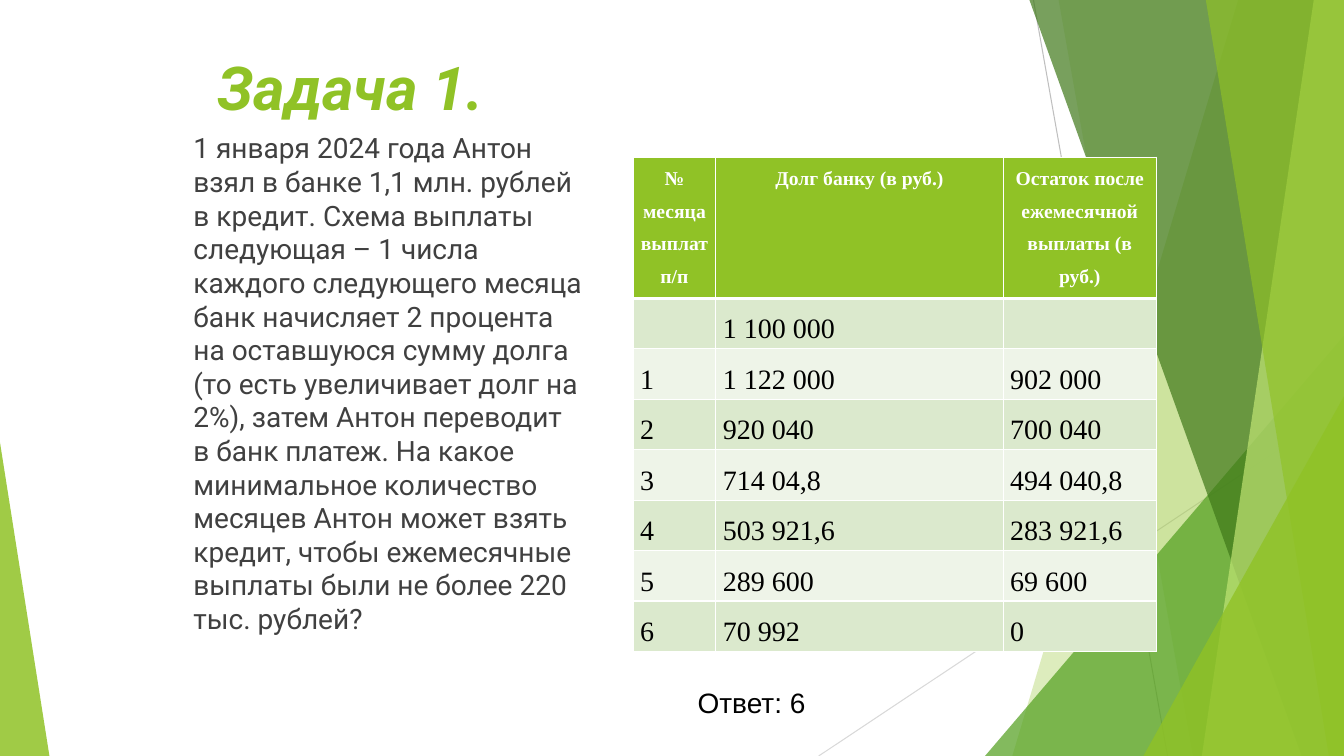
from collections import namedtuple

from lxml.etree import SubElement
from pptx import Presentation
from pptx.dml.color import RGBColor
from pptx.enum.shapes import MSO_CONNECTOR as Connector, MSO_SHAPE as Preset
from pptx.enum.text import MSO_ANCHOR as Anchor, PP_ALIGN as Align
from pptx.oxml.ns import qn
from pptx.util import Inches, Pt

Box = namedtuple("Box", "left top width height")
COLORS = {
    "lime": "90C226", "leaf": "54A021", "forest": "3F7819", "pale": "C0E474",
    "band_dark": "DBE9CD", "band_light": "EEF4E8", "white": "FFFFFF",
    "black": "000000", "body": "404040", "gray": "BFBFBF", "silver": "D9D9D9",
}
RAYS = [((10.25, 0), (11.58, 7.5), "gray"), ((13.33, 4.03), (8.12, 7.5), "silver")]
FACETS = [
    ("facet", 12.28, 10.04, "lime", 30),
    ("facet", 10.5, 11.83, "lime", 20),
    ("peak", 9.77, 3.33, "leaf", 72),
    ("facet", 10.21, 12.91, "forest", 70),
    ("facet", 13.03, 11.92, "pale", 70),
    ("facet", 11.96, 13.18, "lime", 65),
    ("peak", 11.34, 3.93, "lime", 80),
]
HEADER = ["№ месяца выплат п/п", "Долг банку (в руб.)",
          "Остаток после ежемесячной выплаты (в руб.)"]
DEBTS = [
    ["", "1 100 000", ""],
    ["1", "1 122 000", "902 000"],
    ["2", "920 040", "700 040"],
    ["3", "714 04,8", "494 040,8"],
    ["4", "503 921,6", "283 921,6"],
    ["5", "289 600", "69 600"],
    ["6", "70 992", "0"],
]
PROBLEM = (
    "1 января 2024 года Антон взял в банке 1,1 млн. рублей в кредит. "
    "Схема выплаты следующая – 1 числа каждого следующего месяца банк начисляет "
    "2 процента на оставшуюся сумму долга (то есть увеличивает долг на 2%), "
    "затем Антон переводит в банк платеж. На какое минимальное количество месяцев "
    "Антон может взять кредит, чтобы ежемесячные выплаты были не более 220 тыс. рублей?"
)


def rgb(name):
    return RGBColor.from_string(COLORS[name])


def inches(box):
    return [Inches(length) for length in box]


def paint(shape, color, opacity):
    shape.shadow.inherit = False
    shape.line.fill.background()
    shape.fill.solid()
    shape.fill.fore_color.rgb = rgb(color)
    tone = shape._element.spPr.find(qn("a:solidFill"))[0]
    SubElement(tone, qn("a:alpha"), val=str(opacity * 1000))


def add_ray(page, start, end, color):
    ray = page.shapes.add_connector(Connector.STRAIGHT, *inches(start + end))
    ray.line.color.rgb = rgb(color)
    ray.line.width = Pt(0.75)
    SubElement(ray._element.spPr, qn("a:effectLst"))


def add_facet(page, box, top_left, bottom_left, color, opacity):
    right, bottom = box.left + box.width, box.top + box.height
    corners = [inches(corner) for corner in
               [(top_left, box.top), (right, box.top), (right, bottom), (bottom_left, bottom)]]
    builder = page.shapes.build_freeform(*corners[0], scale=1.0)
    builder.add_line_segments(corners[1:], close=True)
    paint(builder.convert_to_shape(), color, opacity)


def add_peak(page, box, apex, color, opacity):
    peak = page.shapes.add_shape(Preset.ISOSCELES_TRIANGLE, *inches(box))
    peak.adjustments[0] = apex
    paint(peak, color, opacity)


def add_backdrop(page, box):
    right, bottom = box.left + box.width, box.top + box.height
    for start, end, color in RAYS:
        add_ray(page, start, end, color)
    for kind, first, second, color, opacity in FACETS:
        if kind == "facet":
            add_facet(page, box, first, second, color, opacity)
        else:
            corner = Box(first, second, right - first, bottom - second)
            add_peak(page, corner, 1, color, opacity)
    add_peak(page, Box(box.left, bottom - 3.11, 0.49, 3.11), 0, "lime", 85)


def style_text(para, font, size, color, bold=False, italic=False):
    for span in para.runs:
        span.font.name = font
        span.font.size = Pt(size)
        span.font.color.rgb = rgb(color)
        span.font.bold = bold
        span.font.italic = italic


def add_text(page, box, text, font, size, color, anchor=Anchor.TOP, before=0, **emphasis):
    frame = page.shapes.add_textbox(*inches(box)).text_frame
    frame.word_wrap = True
    frame.vertical_anchor = anchor
    frame.text = text
    para = frame.paragraphs[0]
    para.space_before = Pt(before)
    style_text(para, font, size, color, **emphasis)


def add_borders(cell, bottom_width):
    properties = cell._tc.get_or_add_tcPr()
    for side, width in zip("LRTB", (1, 1, 1, bottom_width)):
        border = SubElement(properties, qn(f"a:ln{side}"), w=str(Pt(width)))
        fill = SubElement(border, qn("a:solidFill"))
        SubElement(fill, qn("a:srgbClr"), val=COLORS["white"])


def fill_cell(cell, text, color, is_header):
    add_borders(cell, 3 if is_header else 1)
    cell.fill.solid()
    cell.fill.fore_color.rgb = rgb(color)
    cell.margin_left = cell.margin_right = Inches(0.07)
    cell.margin_top = cell.margin_bottom = 0
    cell.text_frame.text = text
    para = cell.text_frame.paragraphs[0]
    para.line_spacing = 1.5
    if is_header:
        para.alignment = Align.CENTER
        style_text(para, "Times New Roman", 14, "white", bold=True)
    else:
        style_text(para, "Times New Roman", 20, "black")


def add_debt_table(page, box):
    rows = [HEADER] + DEBTS
    table = page.shapes.add_table(len(rows), len(HEADER), *inches(box)).table
    for column, width in zip(table.columns, (0.82, 2.85, 1.52)):
        column.width = Inches(width)
    header_height = 1.29
    row_height = (box.height - header_height) / len(DEBTS)
    for index, texts in enumerate(rows):
        is_header = index == 0
        table.rows[index].height = Inches(header_height if is_header else row_height)
        band = "lime" if is_header else "band_dark" if index % 2 else "band_light"
        for column, text in enumerate(texts):
            fill_cell(table.cell(index, column), text, band, is_header)


def main():
    deck = Presentation()
    deck.slide_width, deck.slide_height = Inches(13.33), Inches(7.5)
    page = deck.slides.add_slide(deck.slide_layouts[6])
    add_backdrop(page, Box(0, 0, 13.33, 7.5))
    add_text(page, Box(2.06, 0, 3, 1.27), "Задача 1.", "Roboto", 43.2, "lime",
             Anchor.BOTTOM, bold=True, italic=True)
    add_debt_table(page, Box(6.28, 1.56, 5.19, 4.53))
    add_text(page, Box(1.82, 1.25, 4.06, 6.02), PROBLEM, "Roboto", 20, "body", before=10)
    add_text(page, Box(6.82, 6.75, 1.56, 0.44), "Ответ: 6", "Arial", 20, "black", Anchor.MIDDLE)
    deck.save("out.pptx")


if __name__ == "__main__":
    main()
